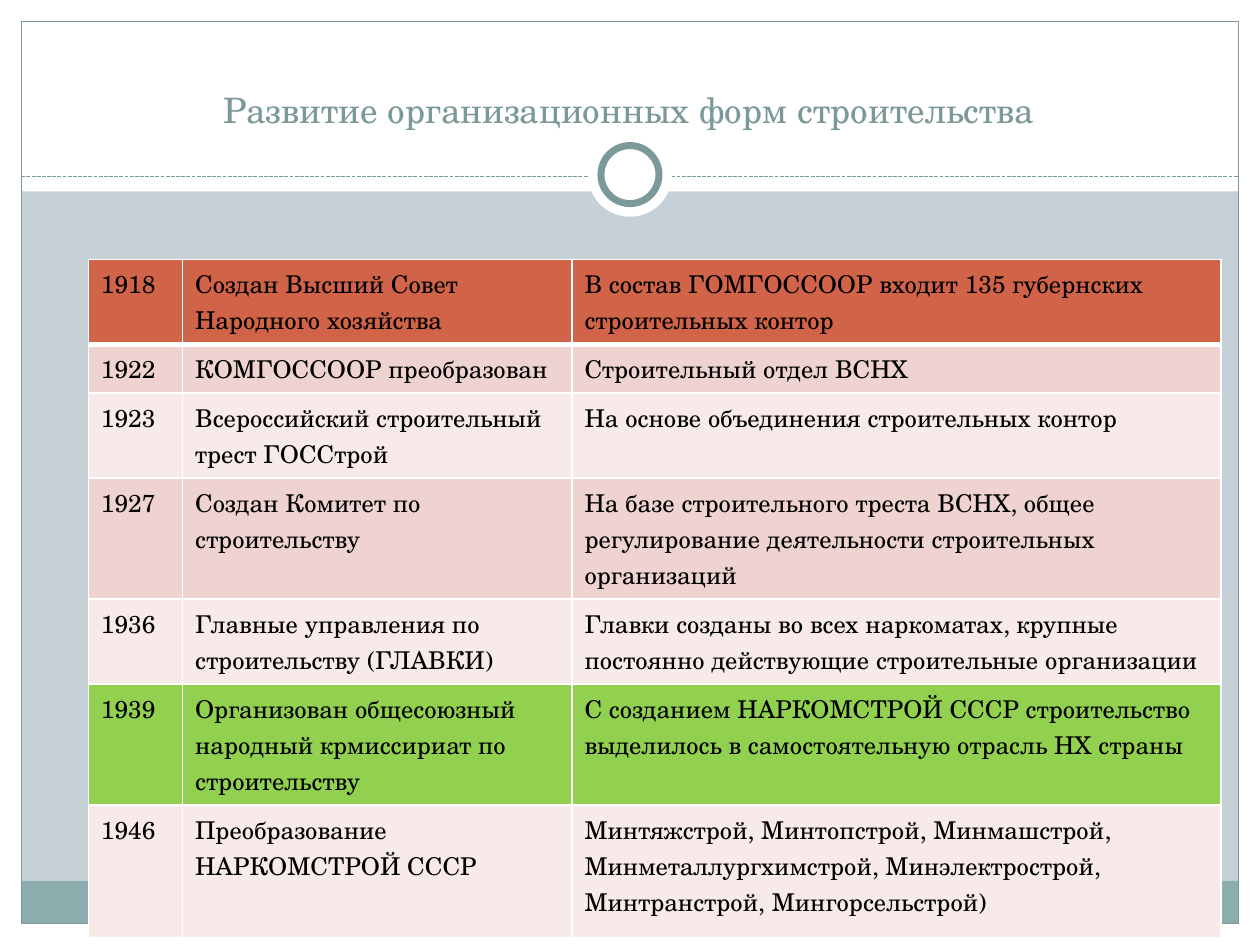
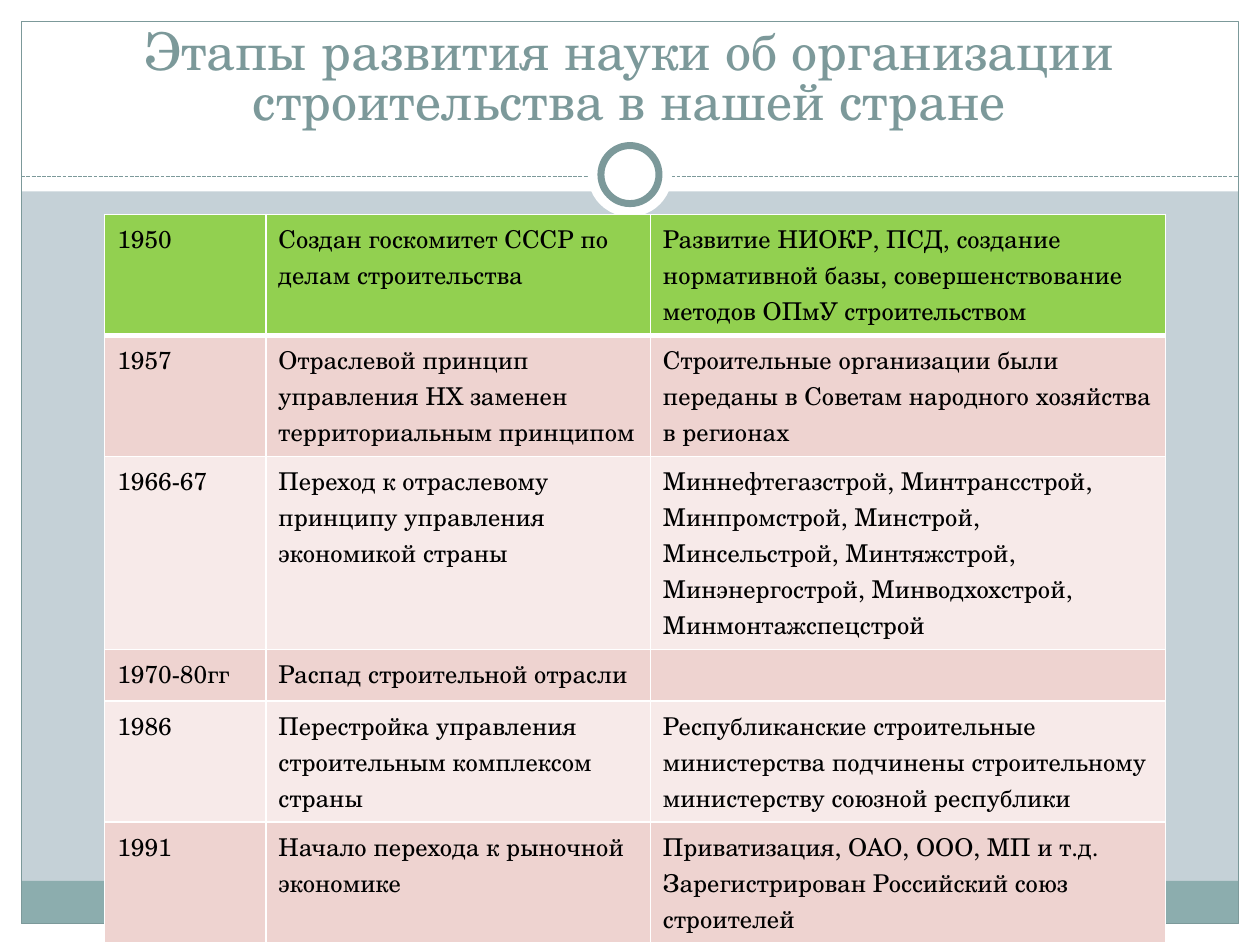
from lxml.etree import SubElement
from pptx import Presentation
from pptx.dml.color import RGBColor
from pptx.enum.dml import MSO_LINE
from pptx.enum.shapes import MSO_CONNECTOR as Connector, MSO_SHAPE as Shape
from pptx.enum.text import MSO_ANCHOR as Anchor, PP_ALIGN as Align
from pptx.oxml.ns import qn
from pptx.util import Cm, Pt

FONT = "TeX Gyre Schola"
COLORS = {
    "background": "C5D1D7", "white": "FFFFFF", "text": "000000",
    "accent": "7C999A", "footer": "8CADAE",
    "header": "D16349", "dark_band": "EED3D0", "light_band": "F7EAE9",
    "highlight": "92D050",
}
WIDTH, HEIGHT = 25.4, 19.05
MARGIN = 0.43
HEADER_HEIGHT, FOOTER_HEIGHT = 3.86, 0.86
TITLE_BOX = (0.84, 0.64, 23.7, 2.11)

FORMS = {
    "title": "Развитие организационных форм строительства",
    "title_size": 20,
    "origin": (1.78, 5.23),
    "columns": [1.9, 7.85, 13.08],
    "row_heights": [1.4, 0.81, 1.4, 1.96, 1.68, 1.96, 2.67],
    "special_rows": {0: "header", 5: "highlight"},
    "rows": [
        ("1918", "Создан Высший Совет Народного хозяйства",
         "В состав ГОМГОССООР входит 135 губернских строительных контор"),
        ("1922", "КОМГОССООР преобразован", "Строительный отдел ВСНХ"),
        ("1923", "Всероссийский строительный трест ГОССтрой",
         "На основе объединения строительных контор"),
        ("1927", "Создан Комитет по строительству",
         "На базе строительного треста ВСНХ, общее регулирование "
         "деятельности строительных организаций"),
        ("1936", "Главные управления по строительству (ГЛАВКИ)",
         "Главки созданы во всех наркоматах, крупные постоянно "
         "действующие строительные организации"),
        ("1939", "Организован общесоюзный народный крмиссириат по строительству",
         "С созданием НАРКОМСТРОЙ СССР строительство выделилось "
         "в самостоятельную отрасль НХ страны"),
        ("1946", "Преобразование НАРКОМСТРОЙ СССР",
         "Минтяжстрой, Минтопстрой, Минмашстрой, Минметаллургхимстрой, "
         "Минэлектрострой, Минтранстрой, Мингорсельстрой)"),
    ],
}
STAGES = {
    "title": "Этапы развития науки об организации строительства в нашей стране",
    "title_size": 29.7,
    "origin": (2.11, 4.32),
    "columns": [3.25, 7.75, 10.39],
    "row_heights": [1.04, 1.04, 1.04, 1.04, 2.26, 1.8],
    "special_rows": {0: "highlight"},
    "rows": [
        ("1950", "Создан госкомитет СССР по делам строительства",
         "Развитие НИОКР, ПСД, создание нормативной базы, "
         "совершенствование методов ОПмУ строительством"),
        ("1957", "Отраслевой принцип управления НХ заменен территориальным принципом",
         "Строительные организации были переданы в Советам "
         "народного хозяйства в регионах"),
        ("1966-67", "Переход к отраслевому принципу управления экономикой страны",
         "Миннефтегазстрой, Минтрансстрой, Минпромстрой, Минстрой, "
         "Минсельстрой, Минтяжстрой, Минэнергострой, Минводхохстрой, "
         "Минмонтажспецстрой"),
        ("1970-80гг", "Распад строительной отрасли", ""),
        ("1986", "Перестройка управления строительным комплексом страны",
         "Республиканские строительные министерства подчинены "
         "строительному министерству союзной республики"),
        ("1991", "Начало перехода к рыночной экономике",
         "Приватизация, ОАО, ООО, МП и т.д. Зарегистрирован "
         "Российский союз строителей"),
    ],
}


def rgb(name):
    return RGBColor.from_string(COLORS[name])


def format_runs(paragraph, size, color):
    for run in paragraph.runs:
        run.font.name = FONT
        run.font.size = Pt(size)
        run.font.color.rgb = rgb(color)


def add_plain_shape(slide, kind, box, fill=None, line_width=None):
    shape = slide.shapes.add_shape(kind, *map(Cm, box))
    shape.shadow.inherit = False
    if fill:
        shape.fill.solid()
        shape.fill.fore_color.rgb = rgb(fill)
    else:
        shape.fill.background()
    if line_width:
        shape.line.color.rgb = rgb("accent")
        shape.line.width = Pt(line_width)
    else:
        shape.line.fill.background()
    return shape


def add_circle(slide, diameter, line_width=None):
    """Circle centred on the divider below the title."""
    center_x, center_y = WIDTH / 2, 3.52
    box = (center_x - diameter / 2, center_y - diameter / 2, diameter, diameter)
    return add_plain_shape(slide, Shape.OVAL, box, "white", line_width)


def add_divider(slide, top):
    line = slide.shapes.add_connector(
        Connector.STRAIGHT, Cm(MARGIN), Cm(top), Cm(WIDTH - MARGIN), Cm(top))
    line.line.color.rgb = rgb("accent")
    line.line.width = Pt(0.75)
    line.line.dash_style = MSO_LINE.SQUARE_DOT
    SubElement(line.element.spPr, qn("a:effectLst"))
    return line


def decorate_layout(layout, slide):
    """Build the shared frame with the slide's tools and move it to the layout."""
    layout.background.fill.solid()
    layout.background.fill.fore_color.rgb = rgb("background")
    for placeholder in list(layout.placeholders)[1:]:
        layout.shapes.element.remove(placeholder.element)

    inner_width = WIDTH - 2 * MARGIN
    white_edges = [
        (0, HEIGHT - MARGIN, WIDTH, MARGIN),
        (0, 0, WIDTH, HEADER_HEIGHT),
        (0, 0, MARGIN, HEIGHT),
        (WIDTH - MARGIN, 0, MARGIN, HEIGHT),
    ]
    footer = (MARGIN, HEIGHT - MARGIN - FOOTER_HEIGHT, inner_width, FOOTER_HEIGHT)
    frame = (MARGIN, MARGIN, inner_width, HEIGHT - 2 * MARGIN)
    parts = [add_plain_shape(slide, Shape.RECTANGLE, box, "white")
             for box in white_edges]
    parts += [
        add_plain_shape(slide, Shape.RECTANGLE, footer, "footer"),
        add_plain_shape(slide, Shape.RECTANGLE, frame, line_width=0.75),
        add_divider(slide, 3.56),
        add_circle(slide, 1.7),
        add_circle(slide, 1.17, line_width=4),
    ]
    for part in parts:
        layout.shapes.element.append(part.element)


def set_title(slide, text, size, box):
    title = slide.shapes.title
    title.left, title.top, title.width, title.height = map(Cm, box)
    frame = title.text_frame
    frame.text = text
    frame.word_wrap = True
    frame.vertical_anchor = Anchor.BOTTOM
    paragraph = frame.paragraphs[0]
    paragraph.alignment = Align.CENTER
    paragraph.line_spacing = 0.8
    format_runs(paragraph, size, "accent")


def set_borders(cell, bottom_width):
    properties = cell._tc.get_or_add_tcPr()
    widths = {"a:lnL": 1, "a:lnR": 1, "a:lnT": 1, "a:lnB": bottom_width}
    for position, (tag, width) in enumerate(widths.items()):
        border = SubElement(properties, qn(tag), w=str(Pt(width)))
        fill = SubElement(border, qn("a:solidFill"))
        SubElement(fill, qn("a:srgbClr"), val=COLORS["white"])
        properties.insert(position, border)


def fill_cell(cell, text, fill, bottom_width):
    cell.text_frame.text = text
    paragraph = cell.text_frame.paragraphs[0]
    format_runs(paragraph, 14, "text")
    # The end mark keeps an empty cell as low as a line of text
    end_mark = SubElement(paragraph._p, qn("a:endParaRPr"), sz="1400")
    SubElement(end_mark, qn("a:latin"), typeface=FONT)
    cell.fill.solid()
    cell.fill.fore_color.rgb = rgb(fill)
    set_borders(cell, bottom_width)


def add_timeline_table(slide, content):
    columns, heights = content["columns"], content["row_heights"]
    box = (*content["origin"], sum(columns), sum(heights))
    table = slide.shapes.add_table(
        len(heights), len(columns), *map(Cm, box)).table
    for column, width in zip(table.columns, columns):
        column.width = Cm(width)
    for index, (row, height) in enumerate(zip(table.rows, heights)):
        row.height = Cm(height)
        band = "dark_band" if index % 2 else "light_band"
        fill = content["special_rows"].get(index, band)
        for cell, text in zip(row.cells, content["rows"][index]):
            fill_cell(cell, text, fill, bottom_width=1 if index else 3)


def main():
    presentation = Presentation()
    presentation.slide_width, presentation.slide_height = Cm(WIDTH), Cm(HEIGHT)
    layout = presentation.slide_layouts[5]
    for index, content in enumerate((FORMS, STAGES)):
        slide = presentation.slides.add_slide(layout)
        if index == 0:
            decorate_layout(layout, slide)
        set_title(slide, content["title"], content["title_size"], TITLE_BOX)
        add_timeline_table(slide, content)
    presentation.save("out.pptx")


if __name__ == "__main__":
    main()
